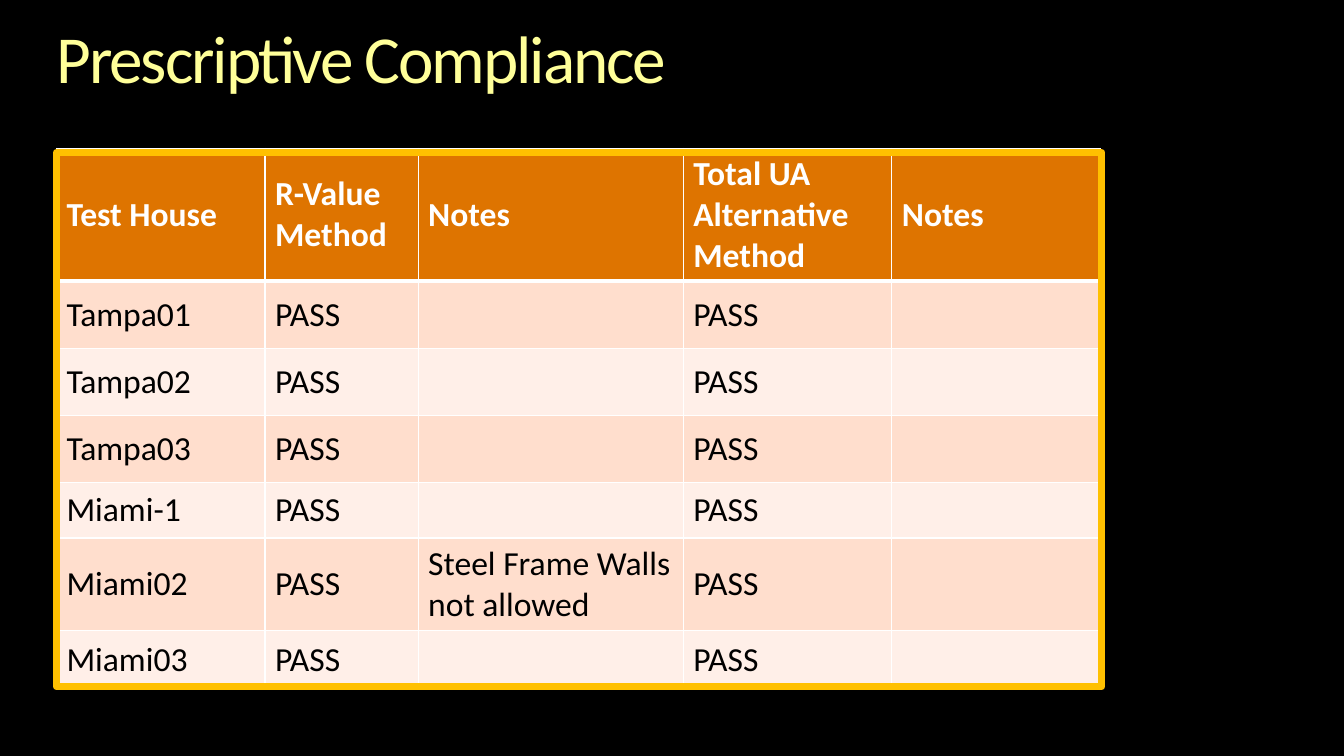
import dataclasses

import lxml.etree
import pptx
import pptx.dml.color
import pptx.enum.shapes
import pptx.enum.text
import pptx.oxml.ns
import pptx.util

Pt = pptx.util.Pt


@dataclasses.dataclass(frozen=True)
class Theme:
    """Colours, font and type sizes of the slide."""
    font: str = "Calibri"
    background: str = "000000"
    title: str = "FFFF99"
    header_fill: str = "DE7400"
    header_text: str = "FFFFFF"
    body_text: str = "000000"
    bands: tuple = ("FFDECD", "FFEFE8")
    grid: str = "FFFFFF"
    frame: str = "FFC000"
    title_size: int = 48
    table_size: int = 24


THEME = Theme()
COLUMN_WIDTHS = (149, 109.4, 189.4, 149, 149)
ROW_HEIGHTS = (94.8, 48, 48, 48, 39.6, 66, 42)
HEADERS = ("Test House", "R-Value Method", "Notes",
           "Total UA Alternative Method", "Notes")
HOUSES = ("Tampa01", "Tampa02", "Tampa03", "Miami-1", "Miami02", "Miami03")
RESULT = "PASS"
VALUE_NOTES = {"Miami02": "Steel Frame Walls not allowed"}


def rgb(color):
    """Return the colour object for a hexadecimal string."""
    return pptx.dml.color.RGBColor.from_string(color)


def format_font(font, size, color, bold=False):
    """Apply the theme font with a size, colour and weight."""
    font.name = THEME.font
    font.size = Pt(size)
    font.color.rgb = rgb(color)
    font.bold = bold


def add_title(slide, left, top, width, height):
    """Place the slide title in the given box."""
    title = slide.shapes.title
    title.left, title.top, title.width, title.height = map(Pt, (left, top, width, height))
    frame = title.text_frame
    frame.text = "Prescriptive Compliance"
    frame.margin_left = frame.margin_top = frame.margin_right = frame.margin_bottom = 0
    frame.word_wrap = True
    frame.auto_size = pptx.enum.text.MSO_AUTO_SIZE.SHAPE_TO_FIT_TEXT
    frame.vertical_anchor = pptx.enum.text.MSO_ANCHOR.TOP
    paragraph = frame.paragraphs[0]
    paragraph.alignment = pptx.enum.text.PP_ALIGN.LEFT
    paragraph.line_spacing = 0.9
    font = paragraph.runs[0].font
    format_font(font, THEME.title_size, THEME.title)
    paragraph.runs[0].font._element.set("spc", "-150")


def set_borders(cell, top_width, bottom_width):
    """Draw the grid lines around a cell."""
    properties = cell._tc.get_or_add_tcPr()
    qn = pptx.oxml.ns.qn
    for side, width in (("L", 1), ("R", 1), ("T", top_width), ("B", bottom_width)):
        line = lxml.etree.SubElement(properties, qn(f"a:ln{side}"), w=str(Pt(width)))
        fill = lxml.etree.SubElement(line, qn("a:solidFill"))
        lxml.etree.SubElement(fill, qn("a:srgbClr"), val=THEME.grid)


def fill_cell(cell, text, row):
    """Write and style one table cell according to its row."""
    is_header = row == 0
    set_borders(cell, 3 if row == 1 else 1, 3 if is_header else 1)
    cell.fill.solid()
    cell.fill.fore_color.rgb = rgb(THEME.header_fill if is_header else THEME.bands[(row - 1) % 2])
    cell.vertical_anchor = pptx.enum.text.MSO_ANCHOR.MIDDLE
    cell.text_frame.text = text
    color = THEME.header_text if is_header else THEME.body_text
    format_font(cell.text_frame.paragraphs[0].font, THEME.table_size, color, is_header)
    for run in cell.text_frame.paragraphs[0].runs:
        format_font(run.font, THEME.table_size, color, is_header)


def add_compliance_table(slide, left, top):
    """Place the compliance table and its frame from the given corner."""
    width, height = sum(COLUMN_WIDTHS), sum(ROW_HEIGHTS)
    rows = [HEADERS] + [(house, RESULT, VALUE_NOTES.get(house, ""), RESULT, "")
                        for house in HOUSES]
    table = slide.shapes.add_table(len(rows), len(HEADERS), Pt(left), Pt(top),
                                   Pt(width), Pt(height)).table
    for column, column_width in zip(table.columns, COLUMN_WIDTHS):
        column.width = Pt(column_width)
    for row, row_height in zip(table.rows, ROW_HEIGHTS):
        row.height = Pt(row_height)
    for row, texts in enumerate(rows):
        for column, text in enumerate(texts):
            fill_cell(table.cell(row, column), text, row)

    inset = 3
    frame = slide.shapes.add_shape(pptx.enum.shapes.MSO_SHAPE.RECTANGLE, Pt(left),
                                   Pt(top + inset), Pt(width + 1), Pt(381.6))
    frame.shadow.inherit = False
    frame.fill.background()
    frame.line.color.rgb = rgb(THEME.frame)
    frame.line.width = Pt(5)


def build_compliance_slide(presentation):
    """Add the prescriptive compliance slide."""
    slide = presentation.slides.add_slide(presentation.slide_layouts[5])
    slide.background.fill.solid()
    slide.background.fill.fore_color.rgb = rgb(THEME.background)
    add_title(slide, 40.3, 18, 880, 52.6)
    add_compliance_table(slide, 40.3, 106)


def main():
    """Build and save the presentation."""
    presentation = pptx.Presentation()
    presentation.slide_width, presentation.slide_height = Pt(960), Pt(540)
    build_compliance_slide(presentation)
    presentation.save("out.pptx")


if __name__ == "__main__":
    main()
